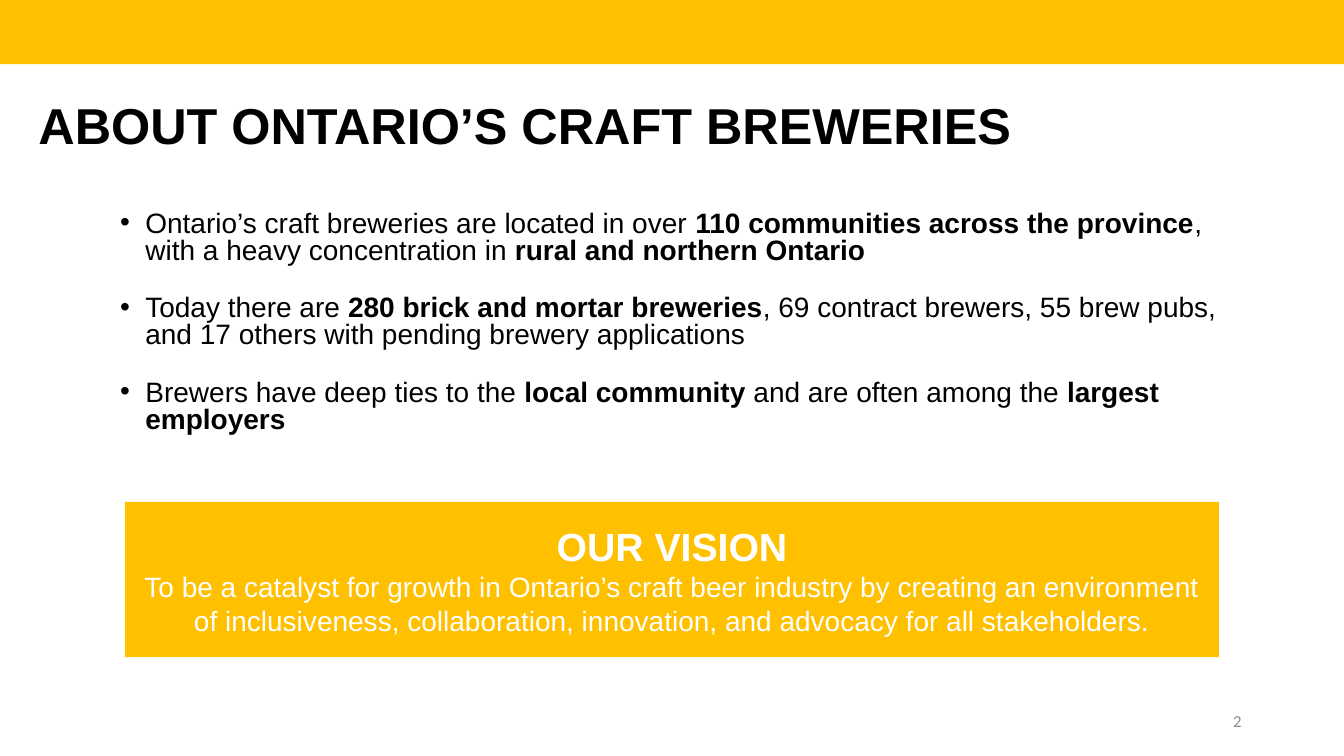
from dataclasses import dataclass

from lxml.etree import SubElement
from pptx import Presentation
from pptx.dml.color import RGBColor
from pptx.enum.shapes import MSO_SHAPE
from pptx.enum.text import MSO_ANCHOR, MSO_AUTO_SIZE, PP_ALIGN
from pptx.oxml.ns import qn
from pptx.util import Emu, Pt

PX = 9525  # EMU in one px, 96 px to the inch
GOLD = RGBColor(0xFF, 0xC0, 0x00)
BLACK = RGBColor(0x00, 0x00, 0x00)
WHITE = RGBColor(0xFF, 0xFF, 0xFF)
GREY = RGBColor(0x8C, 0x8C, 0x8C)


@dataclass(frozen=True)
class Box:
    left: int
    top: int
    width: int
    height: int

    def emu(self) -> list[Emu]:
        return [Emu(n * PX) for n in (self.left, self.top, self.width, self.height)]


@dataclass(frozen=True)
class Style:
    size: int
    color: RGBColor
    bold: bool = False
    font: str = "Arial"


@dataclass(frozen=True)
class Part:
    text: str
    bold: bool = False


BAND = Box(0, -3, 1280, 64)
TITLE = Box(27, 53, 1104, 139)
BODY = Box(105, 197, 1104, 240)
VISION = Box(119, 478, 1042, 148)
NUMBER = Box(904, 667, 288, 38)

POINTS = [
    [
        Part("Ontario’s craft breweries are located in over "),
        Part("110 communities across the province", True),
        Part(", with a heavy concentration in "),
        Part("rural and northern Ontario", True),
    ],
    [
        Part("Today there are "),
        Part("280 brick and mortar breweries", True),
        Part(", 69 contract brewers, 55 brew pubs, and 17 others "
             "with pending brewery applications"),
    ],
    [
        Part("Brewers have deep ties to the "),
        Part("local community ", True),
        Part("and are often among the "),
        Part("largest employers", True),
    ],
]
GOAL = ("To be a catalyst for growth in Ontario’s craft beer industry by creating an "
        "environment of inclusiveness, collaboration, innovation, and advocacy "
        "for all stakeholders.")


def format_run(run, style: Style) -> None:
    font = run.font
    font.name, font.size, font.bold = style.font, Pt(style.size), style.bold
    font.color.rgb = style.color


def write(para, text: str, style: Style, align: PP_ALIGN) -> None:
    para.text = text
    para.alignment = align
    format_run(para.runs[0], style)


def add_block(slide, box: Box):
    block = slide.shapes.add_shape(MSO_SHAPE.RECTANGLE, *box.emu())
    block.shadow.inherit = False
    block.fill.solid()
    block.fill.fore_color.rgb = GOLD
    block.line.fill.background()
    return block


def add_frame(slide, box: Box):
    frame = slide.shapes.add_textbox(*box.emu()).text_frame
    frame.word_wrap = True
    return frame


def add_point(para, parts: list[Part]) -> None:
    para.line_spacing = 0.8
    para.space_before, para.space_after = Pt(10), Pt(12)
    props = para._p.get_or_add_pPr()
    props.set("marL", str(24 * PX))
    props.set("indent", str(-24 * PX))
    SubElement(props, qn("a:buFont"), typeface="Arial")
    SubElement(props, qn("a:buChar"), char="•")
    for part in parts:
        run = para.add_run()
        run.text = part.text
        format_run(run, Style(20, BLACK, part.bold))


def main() -> None:
    deck = Presentation()
    deck.slide_width, deck.slide_height = Emu(1280 * PX), Emu(720 * PX)
    slide = deck.slides.add_slide(deck.slide_layouts[5])

    # Title
    title = slide.shapes.title
    title.left, title.top, title.width, title.height = TITLE.emu()
    frame = title.text_frame
    frame.auto_size = MSO_AUTO_SIZE.NONE
    frame.vertical_anchor = MSO_ANCHOR.MIDDLE
    head = frame.paragraphs[0]
    write(head, "ABOUT ONTARIO’S CRAFT BREWERIES", Style(36, BLACK, True), PP_ALIGN.LEFT)
    head.line_spacing = 0.9

    # Bullet points
    frame = add_frame(slide, BODY)
    for i, parts in enumerate(POINTS):
        add_point(frame.add_paragraph() if i else frame.paragraphs[0], parts)

    # Top band
    add_block(slide, BAND)

    # Page number
    frame = add_frame(slide, NUMBER)
    frame.vertical_anchor = MSO_ANCHOR.MIDDLE
    write(frame.paragraphs[0], "2", Style(12, GREY, font="Calibri"), PP_ALIGN.RIGHT)

    # Vision panel
    frame = add_block(slide, VISION).text_frame
    frame.word_wrap = True
    frame.vertical_anchor = MSO_ANCHOR.MIDDLE
    write(frame.paragraphs[0], "OUR VISION", Style(28, WHITE, True), PP_ALIGN.CENTER)
    write(frame.add_paragraph(), GOAL, Style(20, WHITE), PP_ALIGN.CENTER)

    deck.save("out.pptx")


if __name__ == "__main__":
    main()
